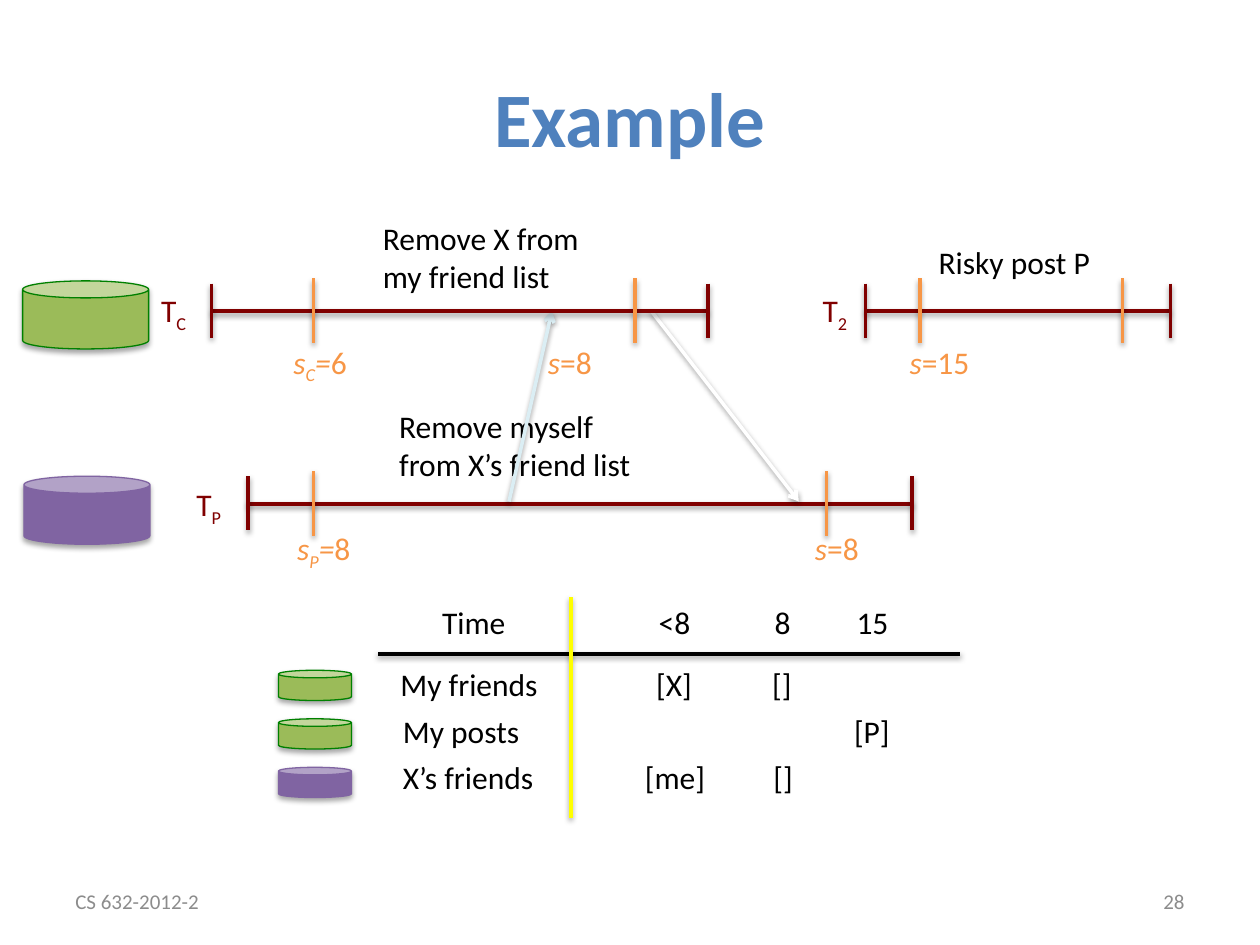
from lxml import etree
from pptx import Presentation
from pptx.dml.color import RGBColor
from pptx.enum import shapes as kinds, text as txt
from pptx.oxml import ns
from pptx.util import Inches, Pt

HEX = {"title": "4F81BD", "gray": "8C8C8C", "span": "800000", "mark": "F79646",
       "ink": "000000", "pale": "DBEEF4", "white": "FFFFFF", "rule": "FFFF00",
       "green": "9BBB59", "edge": "008000", "purple": "8064A2"}
LEFT, RIGHT = txt.PP_ALIGN.LEFT, txt.PP_ALIGN.RIGHT


def rgb(name):
    return RGBColor.from_string(HEX[name])


def shade(shape, alpha, dist):
    """Give a shape a soft shadow that falls straight down."""
    fx = etree.SubElement(shape._element.spPr, ns.qn("a:effectLst"))
    drop = etree.SubElement(fx, ns.qn("a:outerShdw"), blurRad=str(Pt(3.1)),
                            dist=str(Pt(dist)), dir="5400000", rotWithShape="0")
    tone = etree.SubElement(drop, ns.qn("a:srgbClr"), val=HEX["ink"])
    etree.SubElement(tone, ns.qn("a:alpha"), val=str(alpha * 1000))


def line(where, x1, y1, x2, y2, color, arrow=False):
    wire = where.add_connector(kinds.MSO_CONNECTOR.STRAIGHT,
                               *map(Inches, (x1, y1, x2, y2)))
    wire.line.color.rgb = rgb(color)
    wire.line.width = Pt(2)
    if arrow:
        etree.SubElement(wire.line._get_or_add_ln(), ns.qn("a:tailEnd"), type="arrow")
    shade(wire, 38, 1.6)


def label(slide, x, y, w, runs, color="ink", h=0.4, wrap=False, size=18, align=LEFT):
    """Runs are a string, or a list of (text, style): i is italic, _ is subscript."""
    box = slide.shapes.add_textbox(*map(Inches, (x, y, w, h)))
    frame = box.text_frame
    frame.word_wrap = wrap
    para = frame.paragraphs[0]
    para.alignment = align
    for words, style in [(runs, "")] if isinstance(runs, str) else runs:
        run = para.add_run()
        run.text = words
        font = run.font
        font.name, font.size, font.color.rgb = "Calibri", Pt(size), rgb(color)
        if "i" in style:
            font.italic = True
        if "_" in style:
            run._r.get_or_add_rPr().set("baseline", "-25000")
    return frame


def store(slide, x, y, w, h, fill, edge):
    """Cylinder that stands for a data store."""
    can = slide.shapes.add_shape(kinds.MSO_SHAPE.CAN, *map(Inches, (x, y, w, h)))
    can.fill.solid()
    can.fill.fore_color.rgb = rgb(fill)
    can.line.color.rgb = rgb(edge)
    can.line.width = Pt(0.75)
    shade(can, 35, 1.8)


def span(slide, x1, x2, y, marks):
    """Transaction interval with end bars and its timestamp marks."""
    group = slide.shapes.add_group_shape().shapes
    line(group, x1, y, x2, y, "span")
    for x in (x1 + 0.01, x2):
        line(group, x, y - 0.22, x, y + 0.21, "span")
    for x in marks:
        line(slide.shapes, x, y + 0.25, x, y - 0.26, "mark")


def name(slide, x, y, w, sub):
    label(slide, x, y, w, [("T", ""), (sub, "_")], "span", wrap=True)


def stamp(slide, x, y, w, value, sub=""):
    runs = [("s", "i"), ("=" + value, "")]
    if sub:
        runs = [("s", "i"), (sub, "i_"), ("=", "i"), (value, "")]
    label(slide, x, y, w, runs, "mark")


def head(slide):
    title = slide.shapes.title
    title.left, title.top, title.width, title.height = map(Inches, (0.5, 0.3, 9, 1.25))
    frame = title.text_frame
    frame.text = "Example"
    frame.vertical_anchor = txt.MSO_ANCHOR.MIDDLE
    para = frame.paragraphs[0]
    para.alignment = txt.PP_ALIGN.CENTER
    font = para.runs[0].font
    font.name, font.size, font.bold = "Calibri", Pt(44), True
    font.color.rgb = rgb("title")


def foot(slide):
    for x, words, align in ((0.5, "CS 632-2012-2", LEFT), (7.17, "28", RIGHT)):
        frame = label(slide, x, 6.95, 2.33, words, "gray", wrap=True, size=12, align=align)
        frame.vertical_anchor = txt.MSO_ANCHOR.MIDDLE


def times(slide, top, low):
    """Two rows of transactions, at heights top and low."""
    # Lower row, on the purple store
    store(slide, 0.19, low - 0.22, 1, 0.54, "purple", "purple")
    span(slide, 1.96, 7.24, low, (2.49, 6.56))
    name(slide, 1.46, low - 0.2, 0.61, "P")
    label(slide, 3.07, low - 0.82, 2.1, "Remove myself from X’s friend list",
          h=0.71, wrap=True)
    stamp(slide, 2.26, low + 0.15, 0.66, "8", "P")
    stamp(slide, 6.37, low + 0.15, 0.57, "8")

    # Messages between the rows
    line(slide.shapes, 4.04, low - 0.02, 4.38, top, "pale", True)
    line(slide.shapes, 5.17, top, 6.34, low - 0.02, "white", True)

    # Upper row, on the green store
    store(slide, 0.18, top - 0.24, 1, 0.54, "green", "edge")
    span(slide, 1.67, 5.62, top, (2.49, 5.04))
    name(slide, 1.18, top - 0.21, 0.61, "C")
    label(slide, 2.94, top - 0.78, 1.79, "Remove X from my friend list",
          h=0.71, wrap=True)
    stamp(slide, 2.23, top + 0.2, 0.66, "6", "C")
    stamp(slide, 4.25, top + 0.2, 0.57, "8")
    span(slide, 6.86, 9.29, top, (7.3, 8.91))
    name(slide, 6.43, top - 0.21, 0.5, "2")
    label(slide, 7.35, top - 0.59, 1.42, "Risky post P")
    stamp(slide, 7.12, top + 0.2, 0.78, "15")


def state(slide, x, y):
    """Values over time; each cell is (offset, width, words)."""
    rows = ((0, ((0.41, 0.71, "Time"), (2.13, 0.46, "<8"), (3.05, 0.33, "8"),
                 (3.7, 0.46, "15"))),
            (0.49, ((0.08, 1.3, "My friends"), (2.11, 0.49, "[X]"), (3.03, 0.36, "[]"))),
            (0.86, ((0.1, 1.14, "My posts"), (3.68, 0.49, "[P]"))),
            (1.23, ((0.1, 1.27, "X’s friends"), (2.02, 0.68, "[me]"), (3.04, 0.36, "[]"))))
    for drop, cells in rows:
        for shift, w, words in cells:
            label(slide, x + shift, y + drop, w, words)
    line(slide.shapes, x, y + 0.45, x + 4.62, y + 0.45, "ink")
    line(slide.shapes, x + 1.53, y, x + 1.53, y + 1.75, "rule")
    for i, (fill, edge) in enumerate((("green", "edge"), ("green", "edge"),
                                      ("purple", "purple"))):
        store(slide, x - 0.79, y + 0.58 + i * 0.385, 0.58, 0.24, fill, edge)


def main():
    deck = Presentation()
    deck.slide_width, deck.slide_height = Inches(10), Inches(7.5)
    slide = deck.slides.add_slide(deck.slide_layouts[5])
    head(slide)
    foot(slide)
    times(slide, 2.47, 4)
    state(slide, 3, 4.74)
    deck.save("out.pptx")


if __name__ == "__main__":
    main()
